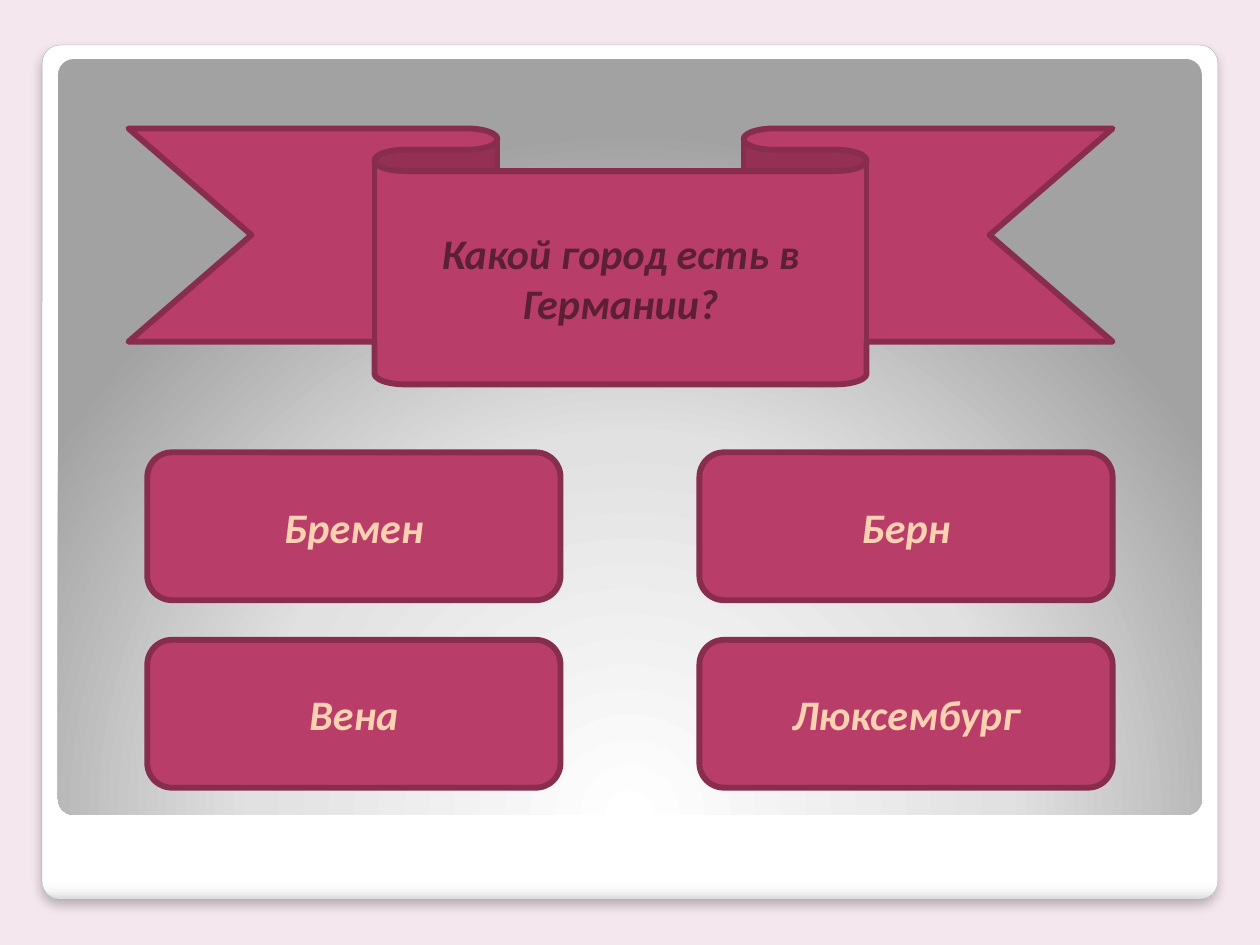
import pptx
import pptx.util
import pptx.oxml
import pptx.dml.color
import pptx.enum.shapes
import pptx.enum.text
from dataclasses import dataclass
from pptx.oxml.ns import nsdecls

Cm, Pt = pptx.util.Cm, pptx.util.Pt
Kind = pptx.enum.shapes.MSO_SHAPE


@dataclass(frozen=True)
class Theme:
    back: str = "F4E7ED"
    fill: str = "B83D68"
    edge: str = "882D4D"
    ask: str = "5C1F34"
    reply: str = "FDD1B1"
    rim: str = "A4A4A4"
    paper: tuple = ((0, "FFFFFF"), (98, "FFFFFF"), (99, "F7F7F7"), (100, "DADADA"))
    glow: tuple = ((0, "FFFFFF"), (55, "E1E1E1"), (100, "A2A2A2"))
    font: str = "Calibri"
    size: float = 24
    line: float = 3.35
    hair: float = 0.16


THEME = Theme()


def rgb(code):
    return pptx.dml.color.RGBColor.from_string(code)


def add_form(slide, kind, box, fill=None, edge=None, width=0, round=None):
    """Add a shadowless shape; box is left, top, width, height in cm."""
    form = slide.shapes.add_shape(kind, *map(Cm, box))
    form.shadow.inherit = False
    if round is not None:
        form.adjustments[0] = round
    for part, code in ((form.fill, fill), (form.line.fill, edge)):
        if code:
            part.solid()
            part.fore_color.rgb = rgb(code)
        else:
            part.background()
    if edge:
        form.line.width = Pt(width)
    return form


def set_grad(form, stops, way):
    """Swap the empty fill for a gradient; way is its direction element."""
    marks = "".join(
        f'<a:gs pos="{pos * 1000}"><a:srgbClr val="{code}"/></a:gs>'
        for pos, code in stops)
    grad = pptx.oxml.parse_xml(
        f'<a:gradFill {nsdecls("a")} rotWithShape="1">'
        f'<a:gsLst>{marks}</a:gsLst>{way}</a:gradFill>')
    props = form._element.spPr
    props.replace(props.find(pptx.oxml.ns.qn("a:noFill")), grad)


def add_shade(form, blur, dist, alpha):
    """Add a soft black shadow straight below the shape."""
    effects = form._element.spPr.find(pptx.oxml.ns.qn("a:effectLst"))
    effects.append(pptx.oxml.parse_xml(
        f'<a:outerShdw {nsdecls("a")} blurRad="{Pt(blur)}" dist="{Pt(dist)}" '
        f'dir="5400000" algn="t" rotWithShape="0"><a:srgbClr val="000000">'
        f'<a:alpha val="{alpha * 1000}"/></a:srgbClr></a:outerShdw>'))


def put_text(form, text, color, size=THEME.size, bold=True, italic=True):
    frame = form.text_frame
    frame.word_wrap = True
    frame.vertical_anchor = pptx.enum.text.MSO_ANCHOR.MIDDLE
    line = frame.paragraphs[0]
    line.alignment = pptx.enum.text.PP_ALIGN.CENTER
    run = line.add_run()
    run.text = text
    font = run.font
    font.name, font.size = THEME.font, Pt(size)
    font.bold, font.italic = bold, italic
    font.color.rgb = rgb(color)


def draw_frame(slide, box):
    """Draw the white card and the grey panel inside it."""
    left, top, width, height = box
    card = add_form(slide, Kind.ROUNDED_RECTANGLE, box, edge=THEME.rim,
                    width=THEME.hair, round=0.021)
    set_grad(card, THEME.paper, '<a:lin ang="5400000" scaled="0"/>')
    add_shade(card, blur=6, dist=4, alpha=25)
    inset = 0.32
    panel = add_form(slide, Kind.ROUNDED_RECTANGLE,
                     (left + inset, top + 0.28, width - 2 * inset, height - 1.98),
                     round=0.021)
    set_grad(panel, THEME.glow,
             '<a:path path="circle"><a:fillToRect l="50000" t="175000" '
             'r="50000" b="-75000"/></a:path>')


def draw_ask(slide, box, text):
    form = add_form(slide, Kind.DOWN_RIBBON, box, THEME.fill, THEME.edge, THEME.line)
    put_text(form, text, THEME.ask)


def draw_grid(slide, box, rows, gaps):
    """Fill the box with answer buttons; gaps are across and down."""
    left, top, width, height = box
    across, down = gaps
    cols = len(rows[0])
    wide = (width - across * (cols - 1)) / cols
    high = (height - down * (len(rows) - 1)) / len(rows)
    for r, row in enumerate(rows):
        for c, text in enumerate(row):
            place = (left + c * (wide + across), top + r * (high + down), wide, high)
            form = add_form(slide, Kind.ROUNDED_RECTANGLE, place,
                            THEME.fill, THEME.edge, THEME.line)
            put_text(form, text, THEME.reply)


def main():
    deck = pptx.Presentation()
    deck.slide_width, deck.slide_height = Cm(25.4), Cm(19.05)
    slide = deck.slides.add_slide(deck.slide_layouts[6])
    back = slide.background.fill
    back.solid()
    back.fore_color.rgb = rgb(THEME.back)
    draw_frame(slide, (0.85, 0.91, 23.7, 17.22))
    draw_ask(slide, (2.59, 2.59, 19.84, 5.16), "Какой город есть в Германии?")
    draw_grid(slide, (2.97, 9.12, 19.46, 6.76),
              (("Бремен", "Берн"), ("Вена", "Люксембург")), (2.8, 0.8))
    deck.save("out.pptx")


if __name__ == "__main__":
    main()
